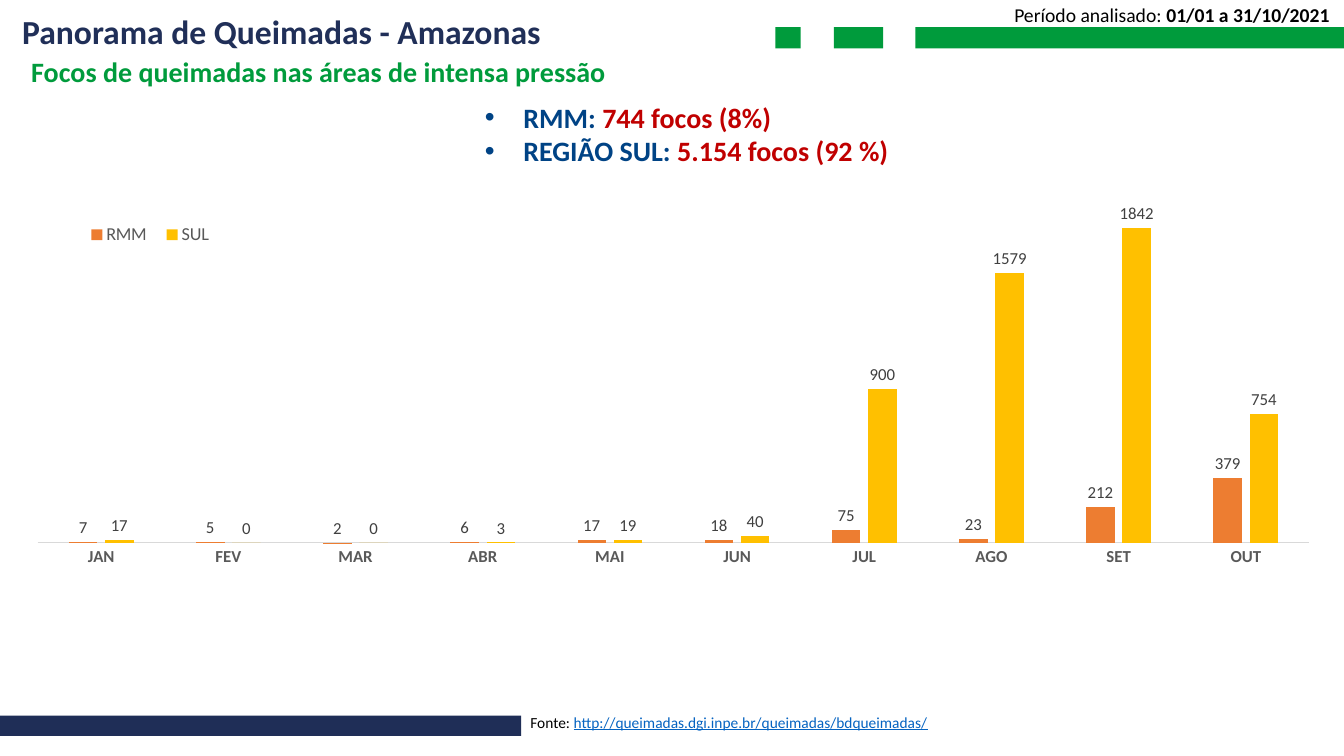
from dataclasses import dataclass
from typing import Optional

from lxml.etree import SubElement
from pptx import Presentation
from pptx.chart.data import CategoryChartData
from pptx.dml.color import RGBColor
from pptx.enum.chart import XL_CHART_TYPE, XL_LABEL_POSITION, XL_LEGEND_POSITION, XL_TICK_MARK
from pptx.enum.shapes import MSO_SHAPE
from pptx.enum.text import MSO_ANCHOR, MSO_AUTO_SIZE, PP_ALIGN
from pptx.oxml import parse_xml
from pptx.oxml.ns import nsdecls, qn
from pptx.util import Inches, Pt

FONT = "Calibri"
GREEN = RGBColor(0x00, 0x9B, 0x3C)
NAVY = RGBColor(0x1F, 0x2E, 0x57)
TITLE_NAVY = RGBColor(0x20, 0x2F, 0x58)
BLUE = RGBColor(0x00, 0x43, 0x85)
RED = RGBColor(0xC0, 0x00, 0x00)
LINK_BLUE = RGBColor(0x05, 0x63, 0xC1)
BLACK = RGBColor(0x00, 0x00, 0x00)
ORANGE = RGBColor(0xED, 0x7D, 0x31)
YELLOW = RGBColor(0xFF, 0xC0, 0x00)
AXIS_TEXT = RGBColor(0x59, 0x59, 0x59)
LABEL_TEXT = RGBColor(0x40, 0x40, 0x40)
AXIS_LINE = RGBColor(0xD9, 0xD9, 0xD9)


@dataclass
class Box:
    left: float
    top: float
    width: float
    height: float


@dataclass
class Bar:
    box: Box
    color: RGBColor


@dataclass
class Span:
    text: str
    color: RGBColor
    bold: bool = False
    underline: bool = False


@dataclass
class Line:
    spans: list[Span]
    size: float
    space_before: float = 0
    bullet: Optional[str] = None


@dataclass
class Caption:
    box: Box
    line: Line


@dataclass
class FireSeries:
    name: str
    values: list[int]
    color: RGBColor


BARS = [
    Bar(Box(9.08, 0.27, 4.25, 0.21), GREEN),
    Bar(Box(8.27, 0.27, 0.49, 0.21), GREEN),
    Bar(Box(7.69, 0.27, 0.25, 0.21), GREEN),
    Bar(Box(0, 7.1, 5.17, 0.2), NAVY),
]
TITLE = Line([Span("Panorama de Queimadas - Amazonas", TITLE_NAVY, True)], 24)
SUMMARY = [
    Line([Span("Focos de queimadas nas áreas de intensa pressão", GREEN, True)], 20, 9.8),
    Line([Span("RMM: ", BLUE, True), Span("744 focos (8%)", RED, True)], 20, 8.8, "•"),
    Line([Span("REGIÃO SUL: ", BLUE, True), Span("5.154 focos (92 %)", RED, True)], 20, 0, "•"),
]
CAPTIONS = [
    Caption(Box(10.05, 0.02, 3.2, 0.25), Line([
        Span("Período analisado: ", BLACK), Span("01/01 a 31/10/2021", BLACK, True)], 14, 1)),
    Caption(Box(5.25, 7.06, 3.96, 0.21), Line([
        Span("Fonte: ", BLACK),
        Span("http://queimadas.dgi.inpe.br/queimadas/bdqueimadas/", LINK_BLUE, underline=True),
    ], 11, 1)),
]
MONTHS = ["JAN", "FEV", "MAR", "ABR", "MAI", "JUN", "JUL", "AGO", "SET", "OUT"]
FIRES = [
    FireSeries("RMM", [7, 5, 2, 6, 17, 18, 75, 23, 212, 379], ORANGE),
    FireSeries("SUL", [17, 0, 0, 3, 19, 40, 900, 1579, 1842, 754], YELLOW),
]


def inches(box: Box) -> tuple:
    return Inches(box.left), Inches(box.top), Inches(box.width), Inches(box.height)


def place(shape, box: Box) -> None:
    shape.left, shape.top, shape.width, shape.height = inches(box)


def style_font(font, size: float, color: RGBColor, bold: bool = False) -> None:
    font.name, font.size, font.bold = FONT, Pt(size), bold
    font.color.rgb = color


def set_frame(frame, left: float, top: float, wrap: bool = True) -> None:
    frame.auto_size = MSO_AUTO_SIZE.NONE
    frame.word_wrap = wrap
    frame.margin_left, frame.margin_top = Inches(left), Inches(top)
    frame.margin_right = frame.margin_bottom = 0


def write_line(paragraph, line: Line) -> None:
    paragraph.alignment = PP_ALIGN.LEFT
    paragraph.space_before = Pt(line.space_before)
    properties = paragraph._p.get_or_add_pPr()
    properties.set("marL", str(Inches(4.89 if line.bullet else 0.01)))
    properties.set("indent", str(Inches(-0.38 if line.bullet else 0)))
    if line.bullet:
        SubElement(properties, qn("a:buChar")).set("char", line.bullet)
    else:
        SubElement(properties, qn("a:buNone"))
    for span in line.spans:
        run = paragraph.add_run()
        run.text = span.text
        style_font(run.font, line.size, span.color, span.bold)
        if span.underline:
            run.font.underline = True


def add_bar(slide, bar: Bar) -> None:
    shape = slide.shapes.add_shape(MSO_SHAPE.RECTANGLE, *inches(bar.box))
    shape.shadow.inherit = False
    shape.fill.solid()
    shape.fill.fore_color.rgb = bar.color
    shape.line.fill.background()


def add_caption(slide, caption: Caption) -> None:
    frame = slide.shapes.add_textbox(*inches(caption.box)).text_frame
    set_frame(frame, 0, 0.01, wrap=False)
    write_line(frame.paragraphs[0], caption.line)


def manual_layout(box: Box, inner: bool = False):
    """Position inside the chart, as fractions of its size."""
    target = '<c:layoutTarget val="inner"/>' if inner else ""
    return parse_xml(
        f'<c:layout {nsdecls("c")}><c:manualLayout>{target}'
        '<c:xMode val="edge"/><c:yMode val="edge"/>'
        f'<c:x val="{box.left}"/><c:y val="{box.top}"/>'
        f'<c:w val="{box.width}"/><c:h val="{box.height}"/>'
        "</c:manualLayout></c:layout>")


def add_fire_chart(slide, box: Box) -> None:
    data = CategoryChartData()
    data.categories = MONTHS
    for fires in FIRES:
        data.add_series(fires.name, fires.values)
    chart = slide.shapes.add_chart(XL_CHART_TYPE.COLUMN_CLUSTERED, *inches(box), data).chart
    chart.has_title = False
    style_font(chart.font, 10, BLACK)

    # Columns and value labels
    plot = chart.plots[0]
    plot.gap_width, plot.overlap, plot.vary_by_categories = 219, -27, False
    for series, fires in zip(plot.series, FIRES):
        series.format.fill.solid()
        series.format.fill.fore_color.rgb = fires.color
        labels = series.data_labels
        labels.show_value = True
        labels.position = XL_LABEL_POSITION.OUTSIDE_END
        style_font(labels.font, 12, LABEL_TEXT)

    # Axes
    values, months = chart.value_axis, chart.category_axis
    values.visible = values.has_major_gridlines = False
    values.minimum_scale, values.maximum_scale = 0, 2000
    months.major_tick_mark = months.minor_tick_mark = XL_TICK_MARK.NONE
    months.format.line.color.rgb = AXIS_LINE
    months.format.line.width = Pt(0.75)
    style_font(months.tick_labels.font, 12, AXIS_TEXT, True)

    # Legend and plot positions
    chart.has_legend = True
    chart.legend.position = XL_LEGEND_POSITION.BOTTOM
    chart.legend.include_in_layout = False
    style_font(chart.legend.font, 13, AXIS_TEXT)
    for old_layout in chart.element.xpath("c:chart/*/c:layout"):
        old_layout.getparent().remove(old_layout)
    plot_area = chart.element.xpath("c:chart/c:plotArea")[0]
    plot_area.insert(0, manual_layout(Box(0.02, 0.02, 0.96, 0.81), inner=True))
    legend_position = chart.element.xpath("c:chart/c:legend/c:legendPos")[0]
    legend_position.addnext(manual_layout(Box(0.05, 0.07, 0.11, 0.06)))


def main() -> None:
    presentation = Presentation()
    presentation.slide_width, presentation.slide_height = Inches(13.33), Inches(7.5)
    slide = presentation.slides.add_slide(presentation.slide_layouts[1])

    # Title and summary list
    title, summary = slide.shapes.title, slide.placeholders[1]
    place(title, Box(0.11, 0.03, 5.84, 0.5))
    set_frame(title.text_frame, 0.1, 0.05, wrap=False)
    title.text_frame.vertical_anchor = MSO_ANCHOR.MIDDLE
    write_line(title.text_frame.paragraphs[0], TITLE)
    place(summary, Box(0.3, 0.4, 8.78, 1.27))
    frame = summary.text_frame
    set_frame(frame, 0, 0.14)
    for index, line in enumerate(SUMMARY):
        write_line(frame.add_paragraph() if index else frame.paragraphs[0], line)

    # Decoration, captions and chart
    for bar in BARS:
        add_bar(slide, bar)
    for caption in CAPTIONS:
        add_caption(slide, caption)
    add_fire_chart(slide, Box(0.11, 1.91, 13.14, 4.19))
    presentation.save("out.pptx")


if __name__ == "__main__":
    main()
